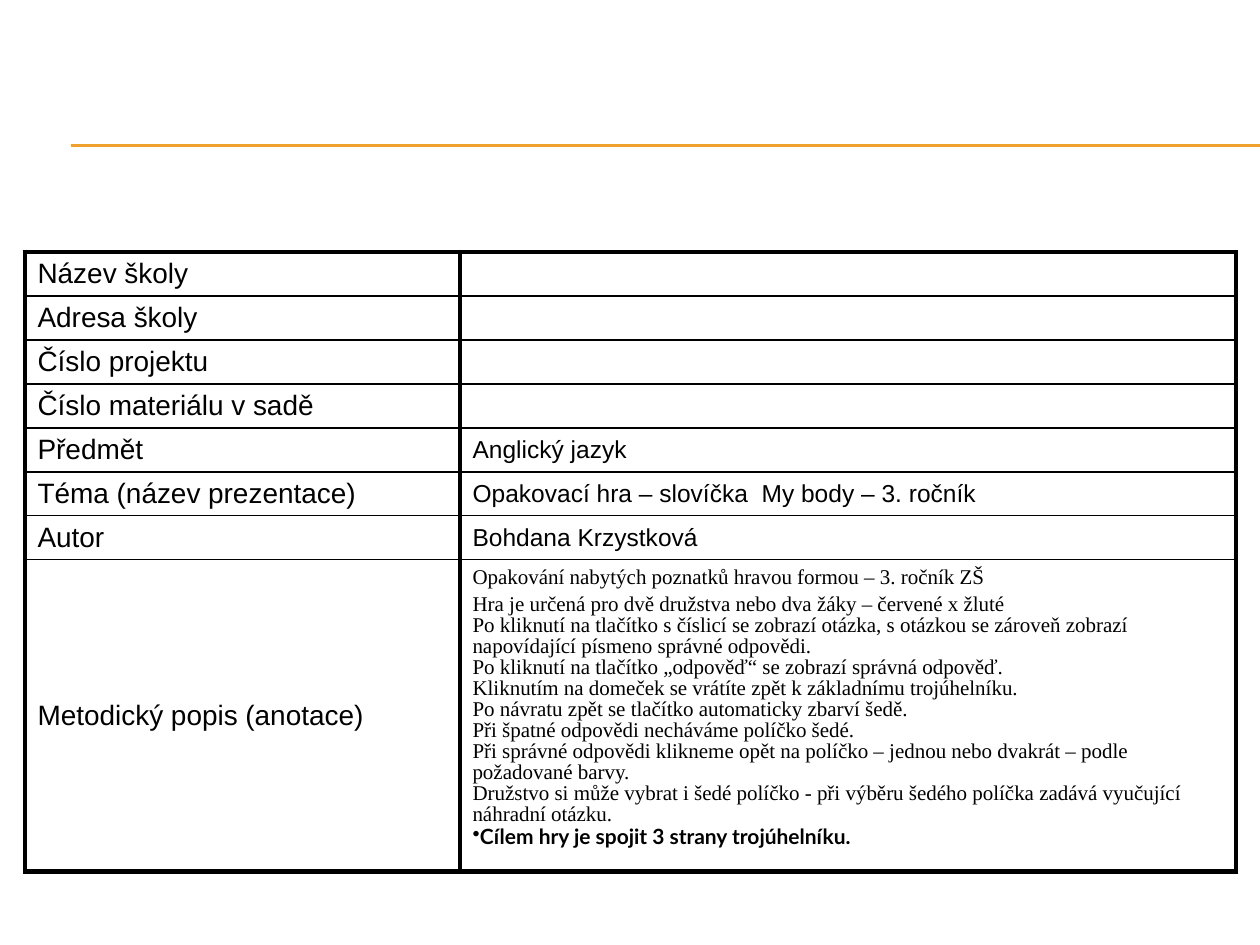
from typing import NamedTuple

import pptx
import pptx.dml.color
import pptx.enum.shapes
import pptx.enum.text
import pptx.oxml.ns
import pptx.util
from lxml import etree

EMU_PER_PX = 914400 // 126
BLACK = "000000"
ORANGE = "F0A22E"
THICK, THIN = 3, 1
LABEL_SIZE, VALUE_SIZE, NOTE_SIZE = 16, 14, 12
COLUMN_WIDTHS = (435, 776)
ROW_HEIGHT, LAST_ROW_HEIGHT = 44, 312
TABLE_LEFT, TABLE_TOP = 25, 252


class Rule(NamedTuple):
    left: int
    top: int
    right: int


class Row(NamedTuple):
    label: str
    value: str = ""


class Note(NamedTuple):
    text: str
    space_before: int = 0
    line_spacing: float = 0.9
    font: str = "Times New Roman"
    bold: bool = False
    bullet: str = ""


RULES = [Rule(71, 145, 1260), Rule(71, 146, 1260)]
ROWS = [
    Row("Název školy"),
    Row("Adresa školy"),
    Row("Číslo projektu"),
    Row("Číslo materiálu v sadě"),
    Row("Předmět", "Anglický jazyk"),
    Row("Téma (název prezentace)", "Opakovací hra – slovíčka  My body – 3. ročník"),
    Row("Autor", "Bohdana Krzystková"),
    Row("Metodický popis (anotace)"),
]
NOTES = [
    Note("Opakování nabytých poznatků hravou formou – 3. ročník ZŠ", 0, 1.0),
    Note("Hra je určená pro dvě družstva nebo dva žáky – červené x žluté", 2, 1.0),
    Note("Po kliknutí na tlačítko s číslicí se zobrazí otázka, s otázkou se zároveň zobrazí "
         "napovídající písmeno správné odpovědi."),
    Note("Po kliknutí na tlačítko „odpověď“ se zobrazí správná odpověď."),
    Note("Kliknutím na domeček se vrátíte zpět k základnímu trojúhelníku."),
    Note("Po návratu zpět se tlačítko automaticky zbarví šedě."),
    Note("Při špatné odpovědi necháváme políčko šedé."),
    Note("Při správné odpovědi klikneme opět na políčko – jednou nebo dvakrát – "
         "podle požadované barvy."),
    Note("Družstvo si může vybrat i šedé políčko - při výběru šedého políčka zadává "
         "vyučující náhradní otázku."),
    Note("Cílem hry je spojit 3 strany trojúhelníku.", font="Lato", bold=True, bullet="•"),
]


def px(length: int) -> int:
    return pptx.util.Emu(length * EMU_PER_PX)


def color(value: str) -> pptx.dml.color.RGBColor:
    return pptx.dml.color.RGBColor.from_string(value)


def add_child(parent, tag: str, **attributes: str):
    return etree.SubElement(parent, pptx.oxml.ns.qn(tag), attributes)


def draw_rule(slide, rule: Rule) -> None:
    connector = slide.shapes.add_connector(
        pptx.enum.shapes.MSO_CONNECTOR.STRAIGHT,
        px(rule.left), px(rule.top), px(rule.right), px(rule.top))
    connector.line.color.rgb = color(ORANGE)
    connector.line.width = pptx.util.Pt(0.75)
    add_child(connector._element.spPr, "a:effectLst")


def frame_cell(cell, first: bool, last: bool) -> None:
    properties = cell._tc.get_or_add_tcPr()
    widths = {"L": THICK, "R": THICK,
              "T": THICK if first else THIN, "B": THICK if last else THIN}
    for side, width in widths.items():
        line = add_child(properties, f"a:ln{side}", w=str(pptx.util.Pt(width)))
        add_child(add_child(line, "a:solidFill"), "a:srgbClr", val=BLACK)
    cell.fill.background()


def format_runs(paragraph, size: int, font: str = "Arial", bold: bool = False) -> None:
    for run in paragraph.runs:
        run.font.size = pptx.util.Pt(size)
        run.font.name = font
        run.font.bold = bold
        run.font.color.rgb = color(BLACK)


def write_cell(cell, text: str, size: int) -> None:
    cell.vertical_anchor = pptx.enum.text.MSO_ANCHOR.MIDDLE
    paragraph = cell.text_frame.paragraphs[0]
    if text:
        paragraph.text = text
        format_runs(paragraph, size)
    else:
        add_child(paragraph._p, "a:endParaRPr", sz=str(size * 100))


def write_notes(cell, notes: list[Note]) -> None:
    cell.vertical_anchor = pptx.enum.text.MSO_ANCHOR.TOP
    text_frame = cell.text_frame
    text_frame.text = "\n".join(note.text for note in notes)
    for paragraph, note in zip(text_frame.paragraphs, notes):
        paragraph.space_before = pptx.util.Pt(note.space_before)
        paragraph.line_spacing = note.line_spacing
        if note.bullet:
            properties = paragraph._p.get_or_add_pPr()
            properties.set("marL", "0")
            properties.set("indent", "0")
            add_child(properties, "a:buChar", char=note.bullet)
        format_runs(paragraph, NOTE_SIZE, note.font, note.bold)


def draw_table(slide, rows: list[Row], notes: list[Note]) -> None:
    heights = [ROW_HEIGHT] * (len(rows) - 1) + [LAST_ROW_HEIGHT]
    table = slide.shapes.add_table(
        len(rows), len(COLUMN_WIDTHS), px(TABLE_LEFT), px(TABLE_TOP),
        px(sum(COLUMN_WIDTHS)), px(sum(heights))).table
    table.first_row = False
    table.horz_banding = False
    for column, width in zip(table.columns, COLUMN_WIDTHS):
        column.width = px(width)
    last_index = len(rows) - 1
    for index, (row, height) in enumerate(zip(rows, heights)):
        table.rows[index].height = px(height)
        label_cell, value_cell = table.cell(index, 0), table.cell(index, 1)
        for cell in (label_cell, value_cell):
            frame_cell(cell, index == 0, index == last_index)
        write_cell(label_cell, row.label, LABEL_SIZE)
        if index == last_index:
            write_notes(value_cell, notes)
        else:
            write_cell(value_cell, row.value, VALUE_SIZE)


def main() -> None:
    presentation = pptx.Presentation()
    presentation.slide_width = px(1260)
    presentation.slide_height = px(945)
    slide = presentation.slides.add_slide(presentation.slide_layouts[6])
    for rule in RULES:
        draw_rule(slide, rule)
    draw_table(slide, ROWS, NOTES)
    presentation.save("out.pptx")


if __name__ == "__main__":
    main()
